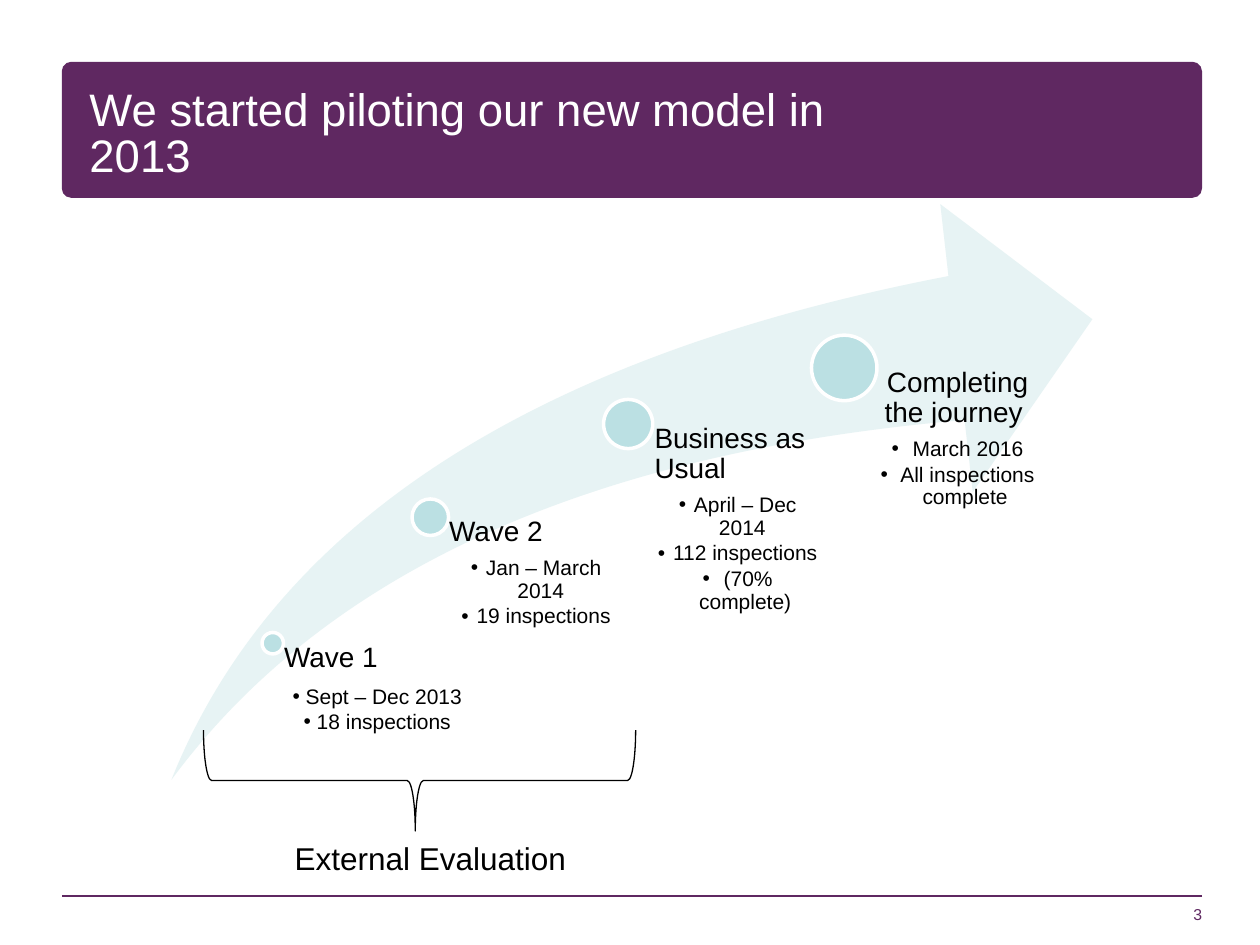
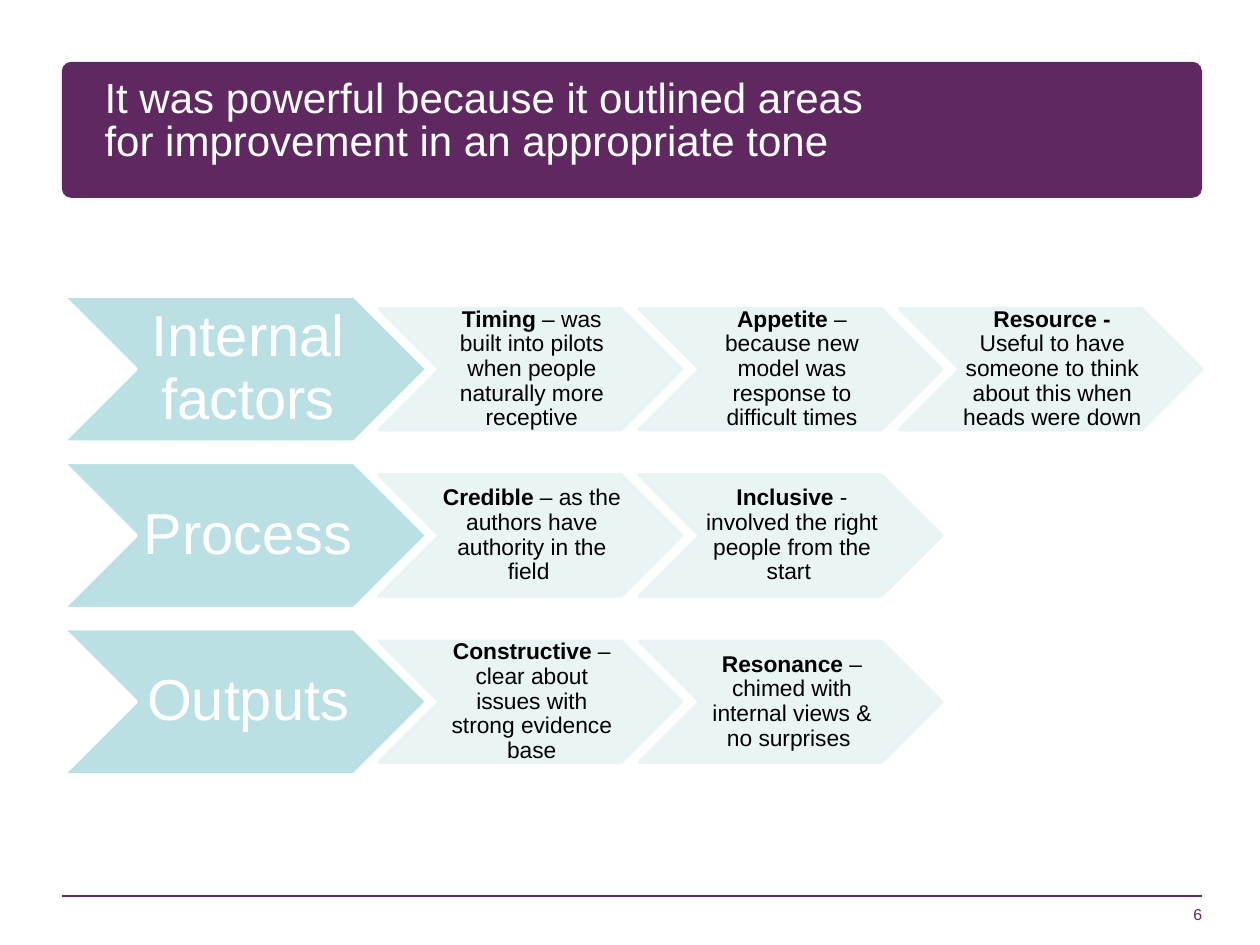
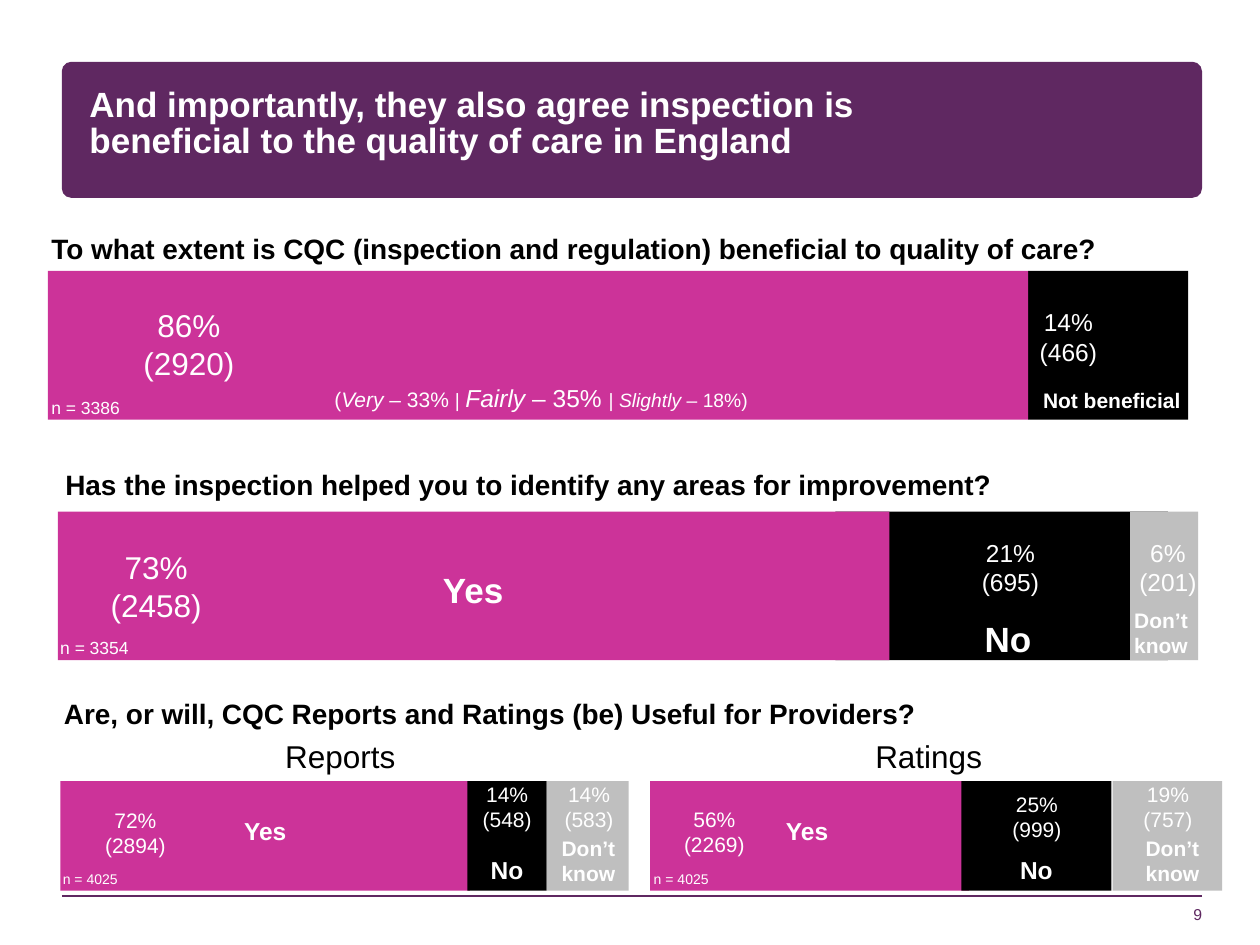
from lxml import etree
from pptx import Presentation
from pptx import util as u
from pptx.dml.color import RGBColor
from pptx.enum import shapes, text
from pptx.oxml.ns import qn

Shape = shapes.MSO_SHAPE
FONT = "Arial"
COLORS = {"purple": "5F2861", "white": "FFFFFF", "black": "000000", "aqua": "BBE0E3",
          "pale": "E7F3F4", "pink": "CC3399", "grey": "BFBFBF"}
ALIGN = {"left": text.PP_ALIGN.LEFT, "center": text.PP_ALIGN.CENTER, "right": text.PP_ALIGN.RIGHT}
ANCHOR = {"top": text.MSO_ANCHOR.TOP, "middle": text.MSO_ANCHOR.MIDDLE,
          "bottom": text.MSO_ANCHOR.BOTTOM}

TITLE_BOX = (0.71, 0.71, 6.12, 0.83)

MILESTONES = [
    ("Wave 1", "left", (2.08, 5.02, 0.17), 1.57, [" Sept – Dec 2013", " 18 inspections"]),
    ("Wave 2", "left", (3.27, 3.96, 0.29), 1.53, ["Jan – March 2014 ", "19 inspections"]),
    ("Business as Usual", "left", (4.79, 3.17, 0.39), 1.53,
     ["April – Dec 2014 ", "112 inspections", " (70% complete)"]),
    ("Completing the journey ", "center", (6.44, 2.66, 0.52), 1.53,
     [" March 2016", " All inspections complete"]),
]
JOURNEY_BOTTOM = 6.19

FACTORS = [
    ("Internal factors", [
        ("Timing", " – was built into pilots when people naturally more receptive"),
        ("Appetite", " – because new model was response to difficult times"),
        ("Resource - ", "Useful to have someone to think about this when heads were down ")]),
    ("Process", [
        ("Credible", " – as the authors have authority in the field "),
        ("Inclusive", " - involved the right people from the start ")]),
    ("Outputs", [
        ("Constructive", " – clear about issues with strong evidence base"),
        ("Resonance", " – chimed with internal views & no surprises ")]),
]

QUESTIONS = [
    ("To what extent is CQC (inspection and regulation) beneficial to quality of care?",
     (0.31, 1.79, 9.04, 0.37)),
    ("Has the inspection helped you to identify any areas for improvement?",
     (0.42, 3.66, 9.12, 0.37)),
    ("Are, or will, CQC Reports and Ratings (be) Useful for Providers?",
     (0.41, 5.48, 9.04, 0.52)),
]
BARS = [
    (2.15, 1.18, [("black", 8.16, 1.27), ("pink", 0.38, 7.78)]),
    (4.06, 1.18, [("black", 6.63, 2.64), ("pink", 0.46, 6.6), ("grey", 8.97, 0.54)]),
    (6.2, 0.87, [("pink", 0.48, 3.25), ("black", 3.71, 0.63), ("grey", 4.34, 0.65)]),
    (6.2, 0.87, [("pink", 5.16, 2.53), ("black", 7.63, 1.19), ("grey", 8.83, 0.87)]),
]
SHARES = [
    ("86%", "(2920)", 18, (1.03, 2.38, 0.94, 0.71)),
    ("14%", "(466)", 14, (8.01, 2.39, 0.94, 0.57)),
    ("73%", "(2458)", 18, (0.77, 4.3, 0.94, 0.71)),
    ("21%", "(695)", 14, (7.55, 4.22, 0.94, 0.57)),
    ("6%", "(201)", 14, (8.8, 4.22, 0.94, 0.57)),
    ("72%", "(2894)", 12, (0.72, 6.36, 0.71, 0.5)),
    ("14%", "(548)", 12, (3.67, 6.15, 0.71, 0.5)),
    ("14%", "(583)", 12, (4.32, 6.15, 0.71, 0.5)),
    ("56%", "(2269)", 12, (5.2, 6.35, 0.94, 0.5)),
    ("25%", "(999)", 12, (7.76, 6.23, 0.94, 0.5)),
    ("19%", "(757)", 12, (8.8, 6.15, 0.94, 0.5)),
]
ANSWERS = [
    ("Not beneficial", 12, "left", (8.18, 3.03, 1.33, 0.3)),
    ("Yes", 20, "center", (0.45, 4.46, 6.61, 0.44)),
    ("No", 20, "center", (7.04, 4.85, 1.92, 0.44)),
    ("Don’t know", 12, "center", (8.81, 4.77, 0.81, 0.51)),
    ("Yes", 14, "center", (0.5, 6.43, 3.21, 0.34)),
    ("No", 14, "center", (3.71, 6.74, 0.63, 0.34)),
    ("Don’t know", 12, "center", (4.29, 6.58, 0.76, 0.51)),
    ("Yes", 14, "center", (5.16, 6.43, 2.49, 0.34)),
    ("No", 14, "center", (7.63, 6.74, 1.19, 0.34)),
    ("Don’t know", 12, "center", (8.83, 6.58, 0.95, 0.51)),
]
SAMPLES = [
    ("n = 3386", 10, (0.31, 3.1, 1.17, 0.27)),
    ("n = 3354", 10, (0.38, 5.01, 1.17, 0.27)),
    ("n = 4025", 8, (0.4, 6.86, 1.17, 0.24)),
    ("n = 4025", 8, (5.09, 6.86, 1.17, 0.24)),
]
BREAKDOWN = [
    ("(", 12, False), ("Very", 12, True), (" – 33% ", 12, False), ("| ", 11, False),
    ("Fairly", 14, True), (" – 35% ", 14, False), ("| ", 11, False),
    ("Slightly", 11, True), (" – 18%)", 11, False),
]
HEADINGS = [("Reports ", 0.48), ("Ratings ", 5.15)]


def rgb(name):
    return RGBColor.from_string(COLORS[name])


def place(box):
    return [u.Inches(value) for value in box]


def add_shape(slide, kind, box, fill=None, line=None, width=1, adjustments=(), alpha=None):
    shape = slide.shapes.add_shape(kind, *place(box))
    shape.shadow.inherit = False
    for index, value in enumerate(adjustments):
        shape.adjustments[index] = value
    if fill:
        shape.fill.solid()
        shape.fill.fore_color.rgb = rgb(fill)
    else:
        shape.fill.background()
    if line:
        shape.line.color.rgb = rgb(line)
        shape.line.width = u.Pt(width)
    else:
        shape.line.fill.background()
    if alpha:
        for color in shape._element.spPr.iter(qn("a:srgbClr")):
            etree.SubElement(color, qn("a:alpha"), val=str(alpha * 1000))
    return shape


def add_run(paragraph, words, size, color, bold=False, italic=False):
    run = paragraph.add_run()
    run.text = words
    run.font.name = FONT
    run.font.size = u.Pt(size)
    run.font.color.rgb = rgb(color)
    run.font.bold = bold
    run.font.italic = italic


def format_paragraph(paragraph, align="left", spacing=None, after=0):
    paragraph.alignment = ALIGN[align]
    paragraph.space_after = u.Pt(after)
    if spacing:
        paragraph.line_spacing = spacing


def add_frame(slide, box, insets=(0.1, 0.05, 0.1, 0.05), anchor="top", wrap=True):
    frame = slide.shapes.add_textbox(*place(box)).text_frame
    frame.word_wrap = wrap
    frame.vertical_anchor = ANCHOR[anchor]
    (frame.margin_left, frame.margin_top,
     frame.margin_right, frame.margin_bottom) = place(insets)
    return frame


def add_text(slide, box, lines, size, color="black", bold=False, align="left",
             spacing=None, **frame_options):
    frame = add_frame(slide, box, **frame_options)
    for index, line in enumerate(lines):
        paragraph = frame.add_paragraph() if index else frame.paragraphs[0]
        format_paragraph(paragraph, align, spacing)
        add_run(paragraph, line, size, color, bold)


def add_bullet(paragraph, indent):
    paragraph.level = 1
    properties = paragraph._p.get_or_add_pPr()
    properties.set("marL", str(u.Inches(indent)))
    properties.set("indent", str(-u.Inches(indent)))
    etree.SubElement(properties, qn("a:buFont"), typeface=FONT)
    etree.SubElement(properties, qn("a:buChar"), char="•")


def start_slide(presentation, number, title, size, bold=False, title_box=TITLE_BOX):
    slide = presentation.slides.add_slide(presentation.slide_layouts[6])
    add_shape(slide, Shape.ROUNDED_RECTANGLE, (0.49, 0.49, 9.05, 1.08), "purple",
              adjustments=(0.07,))
    rule = slide.shapes.add_connector(shapes.MSO_CONNECTOR.STRAIGHT,
                                      *place((9.54, 7.11, 0.49, 7.11)))
    rule.line.color.rgb = rgb("purple")
    rule.line.width = u.Pt(1)
    etree.SubElement(rule._element.spPr, qn("a:effectLst"))
    add_text(slide, title_box, [title], size, "white", bold, spacing=0.85, insets=(0, 0, 0, 0))
    add_text(slide, (7.46, 6.83, 2.08, 0.5), [number], 9, "purple", align="right",
             insets=(0, 0, 0, 0), anchor="bottom")
    return slide


def build_journey(presentation):
    slide = start_slide(presentation, "3", "We started piloting our new model in 2013", 26)
    add_shape(slide, Shape.SWOOSH_ARROW, (1.36, 1.62, 7.31, 4.57), "pale",
              adjustments=(0.25, 0.25))
    for index, (name, align, (left, top, size), width, details) in enumerate(MILESTONES):
        add_shape(slide, Shape.OVAL, (left, top, size, size), "aqua", "white", 2)
        center_x, center_y = left + size / 2, top + size / 2
        frame = add_frame(slide, (center_x, center_y, width, JOURNEY_BOTTOM - center_y),
                          insets=(0.09 + 0.06 * index, 0, 0, 0))
        format_paragraph(frame.paragraphs[0], align, 0.9, 5.6)
        add_run(frame.paragraphs[0], name, 16, "black")
        indent, spacing, after = (0.12, 0.9, 1.8) if index else (0, 1.0, 0)
        for detail in details:
            paragraph = frame.add_paragraph()
            add_bullet(paragraph, indent)
            format_paragraph(paragraph, "center", spacing, after)
            add_run(paragraph, detail, 12, "black")
    brace = add_shape(slide, Shape.RIGHT_BRACE, (2.93, 4.48, 0.8, 3.43), None, "black", 0.75,
                      adjustments=(0.08, 0.51))
    brace.rotation = 90
    add_text(slide, (2.24, 6.61, 2.38, 0.4), ["External Evaluation"], 18, wrap=False)


def add_chevron(slide, box, runs, size, color, insets, **style):
    add_shape(slide, Shape.CHEVRON, box, width=2, **style)
    left, top, width, height = box
    frame = add_frame(slide, (left + height / 2, top, width - height, height), insets, "middle")
    format_paragraph(frame.paragraphs[0], "center", 0.9)
    for words, bold in runs:
        add_run(frame.paragraphs[0], words, size, color, bold)


def build_factors(presentation):
    slide = start_slide(
        presentation, "6",
        "It was powerful because it outlined areas for improvement in an appropriate tone",
        24, title_box=(0.83, 0.63, 6.12, 0.83))
    for row, (factor, reasons) in enumerate(FACTORS):
        top = 2.35 + 1.32 * row
        add_chevron(slide, (0.5, top, 2.89, 1.16), [(factor, False)], 33, "white",
                    (0.05, 0.02, 0, 0.02), fill="aqua", line="white")
        for column, (keyword, reason) in enumerate(reasons):
            add_chevron(slide, (3.01 + 2.065 * column, top + 0.1, 2.4, 0.96),
                        [(keyword, True), (reason, False)], 13, "black",
                        (0.02, 0.01, 0, 0.01), fill="pale", line="pale", alpha=90)


def build_survey(presentation):
    slide = start_slide(
        presentation, "9",
        "And importantly, they also agree inspection is beneficial to the quality of care in England",
        20, bold=True)
    for top, height, segments in BARS:
        for color, left, width in segments:
            add_shape(slide, Shape.RECTANGLE, (left, top, width, height), color)
    for question, box in QUESTIONS:
        add_text(slide, box, [question], 16, bold=True)
    for share, count, size, box in SHARES:
        add_text(slide, box, [share, count], size, "white", align="center")
    for answer, size, align, box in ANSWERS:
        add_text(slide, box, [answer], size, "white", True, align)
    for sample, size, box in SAMPLES:
        add_text(slide, box, [sample], size, "white")
    for heading, left in HEADINGS:
        add_text(slide, (left, 5.8, 4.51, 0.4), [heading], 18, align="center")
    paragraph = add_frame(slide, (0.41, 2.99, 7.77, 0.34)).paragraphs[0]
    format_paragraph(paragraph, "center")
    for words, size, italic in BREAKDOWN:
        add_run(paragraph, words, size, "white", italic=italic)


def main():
    presentation = Presentation()
    presentation.slide_width = u.Inches(10)
    presentation.slide_height = u.Inches(7.5)
    build_journey(presentation)
    build_factors(presentation)
    build_survey(presentation)
    presentation.save("out.pptx")


if __name__ == "__main__":
    main()
